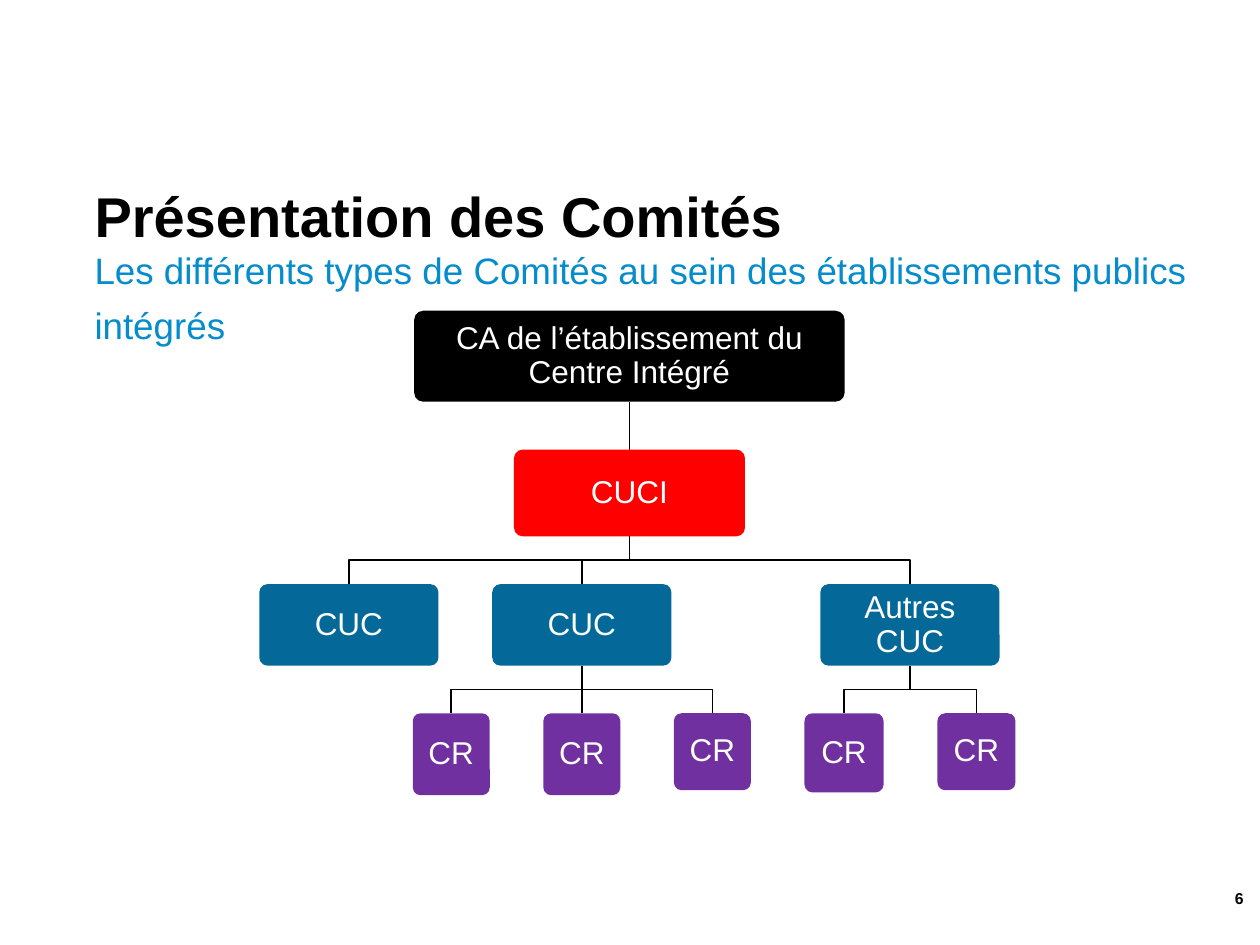
from dataclasses import dataclass

import pptx
import pptx.dml.color
import pptx.enum.shapes
import pptx.enum.text
import pptx.oxml
import pptx.util

Pt = pptx.util.Pt
Align = pptx.enum.text.PP_ALIGN
Anchor = pptx.enum.text.MSO_ANCHOR

COLORS = {
    "black": "000000",
    "white": "FFFFFF",
    "subtitle": "058CCC",
    "red": "FF0000",
    "blue": "046999",
    "purple": "7030A0",
}
BOARD_TOP, CENTRAL_TOP, COMMITTEE_TOP, RESIDENT_TOP = 177.6, 256.9, 333.8, 407.6


@dataclass
class Committee:
    text: str
    center: float
    top: float
    width: float
    height: float
    color: str
    children: tuple = ()

    @property
    def bottom(self) -> float:
        return self.top + self.height


def color_of(name: str) -> pptx.dml.color.RGBColor:
    return pptx.dml.color.RGBColor.from_string(COLORS[name])


def write_text(shape, text: str, *, size: float, color: str, bold: bool = False,
               align=Align.LEFT, anchor=Anchor.TOP, spacing: float = 1.0,
               inset: float = 0) -> None:
    frame = shape.text_frame
    frame.word_wrap = True
    frame.vertical_anchor = anchor
    frame.margin_left = frame.margin_right = Pt(inset)
    frame.margin_top = frame.margin_bottom = Pt(inset)
    paragraph = frame.paragraphs[0]
    paragraph.text = text
    paragraph.alignment = align
    paragraph.line_spacing = spacing
    paragraph.font.name = "Arial"
    paragraph.font.size = Pt(size)
    paragraph.font.bold = bold
    paragraph.font.color.rgb = color_of(color)


def add_text(slide, text: str, left: float, top: float, width: float,
             height: float, **text_format) -> None:
    shape = slide.shapes.add_textbox(Pt(left), Pt(top), Pt(width), Pt(height))
    write_text(shape, text, **text_format)


def draw_link(slide, parent: Committee, child: Committee) -> None:
    start = Pt(parent.center), Pt(parent.bottom)
    end = Pt(child.center), Pt(child.top)
    if parent.center == child.center:
        shape = slide.shapes.add_connector(
            pptx.enum.shapes.MSO_CONNECTOR.STRAIGHT, *start, *end)
        shape._element.spPr.append(pptx.oxml.parse_xml(
            '<a:effectLst xmlns:a="http://schemas.openxmlformats.org/drawingml/2006/main"/>'))
    else:
        middle = Pt((parent.bottom + child.top) / 2)
        builder = slide.shapes.build_freeform(*start)
        builder.add_line_segments(
            [(start[0], middle), (end[0], middle), end], close=False)
        shape = builder.convert_to_shape()
        shape.shadow.inherit = False
        shape.fill.background()
    shape.line.color.rgb = color_of("black")
    shape.line.width = Pt(1)


def draw_committee(slide, committee: Committee) -> None:
    shape = slide.shapes.add_shape(
        pptx.enum.shapes.MSO_SHAPE.ROUNDED_RECTANGLE,
        Pt(committee.center - committee.width / 2), Pt(committee.top),
        Pt(committee.width), Pt(committee.height))
    shape.adjustments[0] = 0.1
    shape.shadow.inherit = False
    shape.fill.solid()
    shape.fill.fore_color.rgb = color_of(committee.color)
    shape.line.fill.background()
    write_text(shape, committee.text, size=18, color="white", align=Align.CENTER,
               anchor=Anchor.MIDDLE, spacing=0.9, inset=6.5)
    for child in committee.children:
        draw_link(slide, committee, child)
        draw_committee(slide, child)


def resident(center: float, width: float, height: float) -> Committee:
    return Committee("CR", center, RESIDENT_TOP, width, height, "purple")


def user_committee(text: str, center: float, *children: Committee) -> Committee:
    return Committee(text, center, COMMITTEE_TOP, 102.4, 46.6, "blue", children)


def main() -> None:
    presentation = pptx.Presentation()
    presentation.slide_width = Pt(720)
    presentation.slide_height = Pt(540)
    slide = presentation.slides.add_slide(presentation.slide_layouts[6])

    add_text(slide, "6", 665.3, 504, 45.4, 18.7, size=9, color="black", bold=True,
             align=Align.RIGHT, anchor=Anchor.MIDDLE)
    add_text(slide, "Les différents types de Comités au sein des établissements publics intégrés",
             54, 135.4, 630, 41.8, size=21, color="subtitle", spacing=1.25)

    central = Committee("CUCI", 359.7, CENTRAL_TOP, 132, 49.6, "red", (
        user_committee("CUC", 199.4),
        user_committee("CUC", 332.5, resident(257.9, 44, 46.8),
                       resident(332.5, 44, 46.8), resident(407.1, 44, 44)),
        user_committee("Autres CUC", 520, resident(482.3, 45.2, 45.2),
                       resident(558, 44.6, 44)),
    ))
    board = Committee("CA de l’établissement du Centre Intégré", 359.7, BOARD_TOP,
                      246, 52, "black", (central,))
    draw_committee(slide, board)

    add_text(slide, "Présentation des Comités", 54, 108, 630, 41.8,
             size=32, color="black", bold=True, spacing=0.9)
    presentation.save("out.pptx")


if __name__ == "__main__":
    main()
